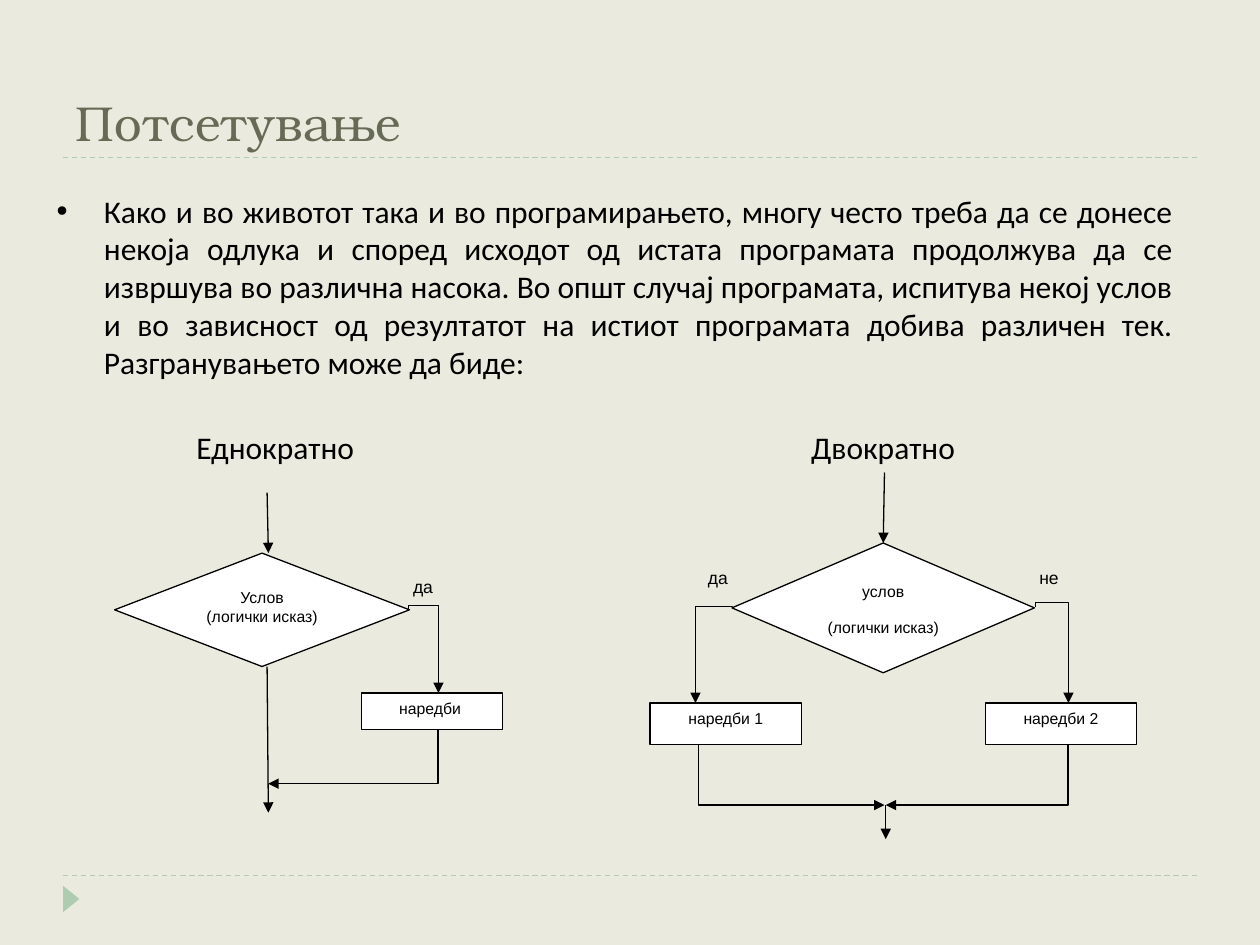
from lxml.etree import SubElement
from pptx import Presentation
from pptx.dml.color import RGBColor
from pptx.enum.dml import MSO_LINE
from pptx.enum.shapes import MSO_CONNECTOR, MSO_SHAPE
from pptx.enum.text import MSO_ANCHOR, MSO_AUTO_SIZE, PP_ALIGN
from pptx.oxml.ns import qn
from pptx.util import Emu, Pt

PX = 9144  # 100 px to the inch

BACKGROUND = RGBColor(0xEA, 0xEB, 0xDE)
SAGE = RGBColor(0xB0, 0xCC, 0xB0)
OLIVE = RGBColor(0x67, 0x6A, 0x55)
BLACK = RGBColor(0, 0, 0)
WHITE = RGBColor(0xFF, 0xFF, 0xFF)

TITLE = {"name": "TeX Gyre Bonum", "size": Pt(28)}
BODY = {"name": "Calibri", "size": Pt(18)}
STEP = {"name": "Arial", "size": Pt(9)}
BRANCH = {"name": "Arial", "size": Pt(10)}


def px(value):
    return Emu(round(value * PX))


def place(shape, left, top, width, height):
    box = {"left": left, "top": top, "width": width, "height": height}
    for side, value in box.items():
        setattr(shape, side, px(value))


class FlowSlide:
    def __init__(self, deck):
        self.slide = deck.slides.add_slide(deck.slide_layouts[1])
        self.shapes = self.slide.shapes
        fill = self.slide.background.fill
        fill.solid()
        fill.fore_color.rgb = BACKGROUND

    def set_text(self, frame, lines, font, color=BLACK, **paragraph_format):
        frame.text = "\n".join(lines)
        for paragraph in frame.paragraphs:
            for name, value in paragraph_format.items():
                setattr(paragraph, name, value)
            for name, value in font.items():
                setattr(paragraph.font, name, value)
            paragraph.font.color.rgb = color

    def title(self, text, box):
        heading = self.shapes.title
        place(heading, *box)
        frame = heading.text_frame
        self.set_text(frame, [text], TITLE, OLIVE, alignment=PP_ALIGN.LEFT)
        frame.vertical_anchor = MSO_ANCHOR.BOTTOM
        frame.auto_size = MSO_AUTO_SIZE.NONE

    def body(self, text, box):
        intro = self.slide.placeholders[1]
        place(intro, *box)
        frame = intro.text_frame
        frame.auto_size = MSO_AUTO_SIZE.NONE
        frame.margin_top = px(13)
        properties = frame.paragraphs[0]._p.get_or_add_pPr()
        properties.set("marL", str(px(30)))
        properties.set("indent", str(px(7)))
        SubElement(properties, qn("a:buNone"))
        self.set_text(frame, [text], BODY,
                      alignment=PP_ALIGN.JUSTIFY, space_before=Pt(0))

    def label(self, text, box, font, wrap=True, space_after=Pt(0)):
        frame = self.shapes.add_textbox(*map(px, box)).text_frame
        frame.word_wrap = wrap
        self.set_text(frame, [text], font, space_after=space_after)

    def shape(self, kind, box, fill):
        shape = self.shapes.add_shape(kind, *map(px, box))
        shape.shadow.inherit = False
        shape.fill.solid()
        shape.fill.fore_color.rgb = fill
        return shape

    def node(self, kind, box, lines, space_after=Pt(10)):
        node = self.shape(kind, box, WHITE)
        node.line.color.rgb = BLACK
        node.line.width = Pt(0.75)
        node.text_frame.vertical_anchor = MSO_ANCHOR.TOP
        self.set_text(node.text_frame, lines, STEP,
                      alignment=PP_ALIGN.CENTER, space_after=space_after)
        return node

    def marker(self, box):
        triangle = self.shape(MSO_SHAPE.ISOSCELES_TRIANGLE, box, SAGE)
        triangle.line.fill.background()
        triangle.rotation = 90

    def connector(self, start, end, color, kind=MSO_CONNECTOR.STRAIGHT):
        link = self.shapes.add_connector(kind, *map(px, (*start, *end)))
        link.line.color.rgb = color
        link.line.width = Pt(0.75)
        SubElement(link._element.spPr, qn("a:effectLst"))
        return link

    def rule(self, y):
        self.connector((50, y), (950, y), SAGE).line.dash_style = MSO_LINE.DASH

    def arrow(self, start, end, kind=MSO_CONNECTOR.STRAIGHT):
        link = self.connector(start, end, BLACK, kind)
        outline = link._element.spPr.find(qn("a:ln"))
        SubElement(outline, qn("a:tailEnd"), type="triangle")
        return link

    def elbow(self, start, end, bend, turned=False):
        """Bend is the place of the middle leg in 1/1000 of the run; turned runs down first."""
        link = self.arrow(start, end, MSO_CONNECTOR.ELBOW)
        properties = link._element.spPr
        guides = properties.find(qn("a:prstGeom")).find(qn("a:avLst"))
        SubElement(guides, qn("a:gd"), name="adj1", fmla=f"val {bend * 100}")
        if turned:
            (x1, y1), (x2, y2) = start, end
            run, rise = abs(y2 - y1), abs(x2 - x1)
            place(link, (x1 + x2 - run) / 2, (y1 + y2 - rise) / 2, run, rise)
            rightward = x2 > x1
            frame = properties.find(qn("a:xfrm"))
            frame.set("rot", str((270 if rightward else 90) * 60000))
            frame.set("flipH", str(int(rightward)))


def single_branch(page):
    page.label("Еднократно", (146, 335, 147, 40), BODY, wrap=False)
    page.node(MSO_SHAPE.FLOWCHART_DECISION, (91, 439, 234, 90),
              ["Услов", "(логички исказ)"], space_after=Pt(0))
    page.node(MSO_SHAPE.RECTANGLE, (287, 550, 112, 29), ["наредби "])
    page.arrow((212, 391), (213, 439))
    page.arrow((212, 529), (213, 645))
    page.elbow((324, 484), (348, 550), -49, turned=True)
    page.elbow((348, 579), (213, 622), 3)
    page.label("да", (318, 452, 41, 32), BRANCH, space_after=Pt(10))


def double_branch(page):
    page.label("Двократно", (634, 335, 136, 40), BODY, wrap=False)
    condition = page.node(MSO_SHAPE.FLOWCHART_DECISION, (581, 431, 240, 103),
                          ["услов", "(логички исказ)"])
    page.arrow((702, 375), (701, 431)).end_connect(condition, 0)

    branches = (
        ("да", 552, "наредби 1", 516, (581, 482), 552, -10, 702, 16),
        ("не", 815, "наредби 2", 782, (822, 482), 848, -49, 703, 3),
    )
    for answer, answer_x, step, step_x, corner, drop_x, bend, join_x, join_bend in branches:
        page.node(MSO_SHAPE.RECTANGLE, (step_x, 558, 120, 33), [step])
        page.elbow(corner, (drop_x, 558), bend, turned=True)
        page.elbow((drop_x, 591), (join_x, 639), join_bend)
        page.label(answer, (answer_x, 445, 43, 37), BRANCH, space_after=Pt(10))
    page.arrow((703, 639), (703, 666))


def main():
    deck = Presentation()
    deck.slide_width, deck.slide_height = px(1000), px(750)
    page = FlowSlide(deck)
    for y in (695, 125):
        page.rule(y)
    page.marker((46, 707, 21, 13))
    page.title("Потсетување", (50, 17, 900, 108))
    page.body(
        "Како и во животот така и во програмирањето, многу често треба да се "
        "донесе некоја одлука и според исходот од истата програмата продолжува "
        "да се извршува во различна насока. Во општ случај програмата, испитува "
        "некој услов и во зависност од резултатот на истиот програмата добива "
        "различен тек. Разгранувањето може да биде:",
        (35, 139, 906, 173))
    single_branch(page)
    double_branch(page)
    deck.save("out.pptx")


if __name__ == "__main__":
    main()
